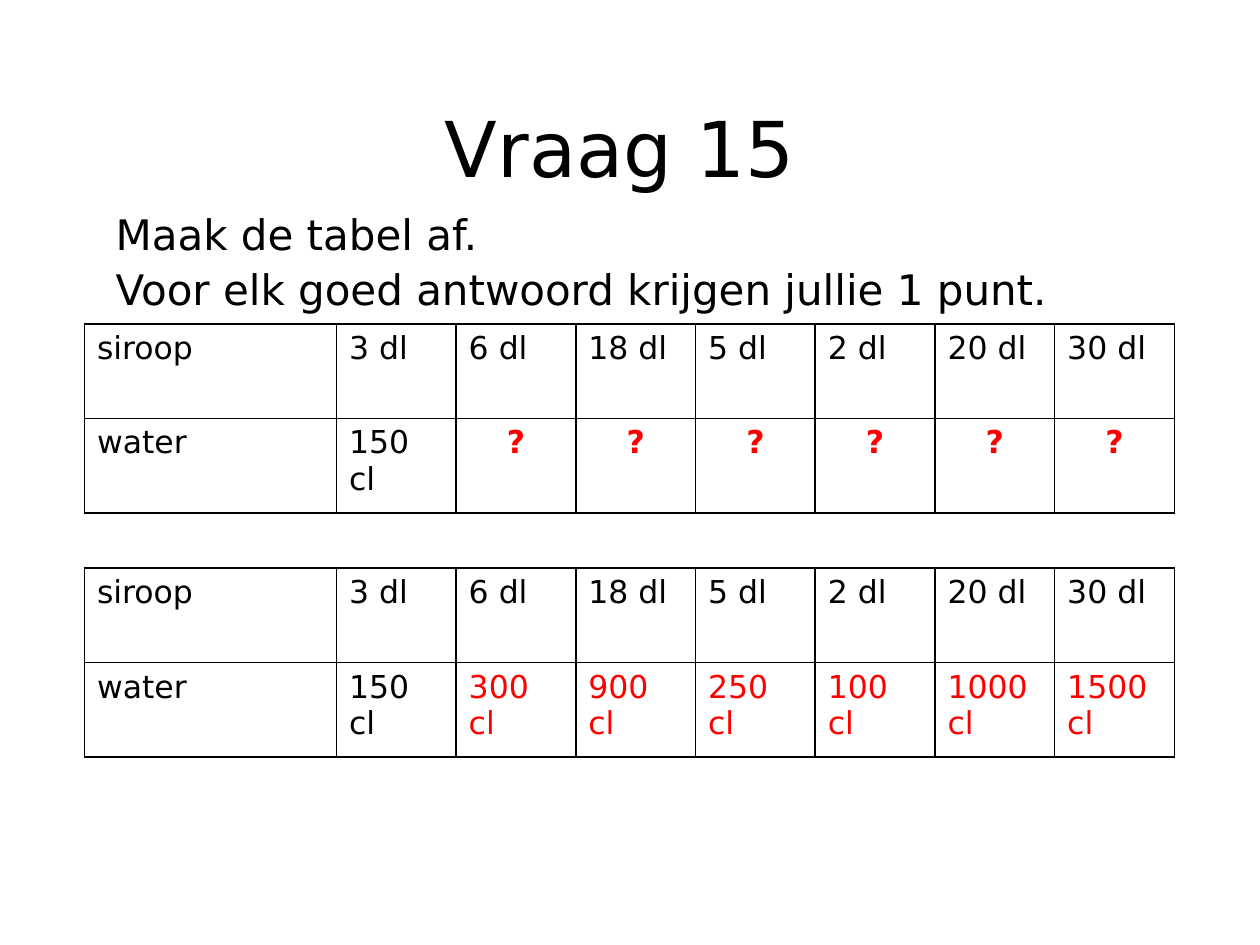
from lxml import etree
from pptx import Presentation
from pptx.dml.color import RGBColor
from pptx.enum import shapes, text
from pptx.oxml import ns
from pptx.util import Inches, Pt

BLACK = RGBColor(0, 0, 0)
WHITE = RGBColor(255, 255, 255)
RED = RGBColor(255, 0, 0)
FONT = "DejaVu Sans"

SYRUP = ["siroop", "3 dl", "6 dl", "18 dl", "5 dl", "2 dl", "20 dl", "30 dl"]
GIVEN = ["water", "150 cl"]
QUESTIONS = ["?"] * 6
ANSWERS = ["300 cl", "900 cl", "250 cl", "100 cl", "1000 cl", "1500 cl"]


def add_span(para, words, size, color=BLACK, bold=False):
    span = para.add_run()
    span.text = words
    span.font.name = FONT
    span.font.size = Pt(size)
    span.font.bold = bold
    span.font.color.rgb = color


def set_title(page, words):
    title = page.shapes.title
    title.left, title.top = Inches(0.67), Inches(0.36)
    title.width, title.height = Inches(8.5), Inches(1.61)
    title.text_frame.vertical_anchor = text.MSO_ANCHOR.MIDDLE
    para = title.text_frame.paragraphs[0]
    para.alignment = text.PP_ALIGN.CENTER
    add_span(para, words, 44)


def add_instructions(page, lines):
    box = page.shapes.add_shape(
        shapes.MSO_SHAPE.RECTANGLE,
        Inches(0.43), Inches(1.65), Inches(9.06), Inches(5.17))
    box.shadow.inherit = False
    box.line.fill.background()
    box.fill.solid()
    box.fill.fore_color.rgb = WHITE
    color = box.fill._xPr.find(".//" + ns.qn("a:srgbClr"))
    etree.SubElement(color, ns.qn("a:alpha"), val="76000")
    frame = box.text_frame
    frame.word_wrap = True
    frame.vertical_anchor = text.MSO_ANCHOR.TOP
    for index, line in enumerate(lines):
        para = frame.paragraphs[0] if index == 0 else frame.add_paragraph()
        para.alignment = text.PP_ALIGN.LEFT
        para.line_spacing = 0.9
        para.space_before = Pt(5.8 if index else 0)
        properties = para._p.get_or_add_pPr()
        properties.set("marL", str(Inches(0.21)))
        properties.set("indent", str(Inches(0.18)))
        add_span(para, line, 24)


def add_borders(cell):
    properties = cell._tc.get_or_add_tcPr()
    for index, side in enumerate(("lnL", "lnR", "lnT", "lnB")):
        line = etree.Element(ns.qn("a:" + side), w=str(Pt(1)))
        fill = etree.SubElement(line, ns.qn("a:solidFill"))
        etree.SubElement(fill, ns.qn("a:srgbClr"), val=str(BLACK))
        properties.insert(index, line)


def add_ratio_table(page, top, results, emphasized=False):
    rows = [SYRUP, GIVEN + results]
    table = page.shapes.add_table(
        len(rows), len(SYRUP),
        Inches(0.67), Inches(top), Inches(8.66), Inches(1.5)).table
    table.first_row = False
    table.horz_banding = False
    for index, column in enumerate(table.columns):
        column.width = Inches(0.95 if index else 2)
    for row_index, row in enumerate(rows):
        table.rows[row_index].height = Inches(0.75)
        for column_index, words in enumerate(row):
            cell = table.cell(row_index, column_index)
            cell.fill.background()
            add_borders(cell)
            para = cell.text_frame.paragraphs[0]
            is_result = row_index == 1 and column_index >= len(GIVEN)
            if is_result and emphasized:
                para.alignment = text.PP_ALIGN.CENTER
            add_span(para, words, 18, RED if is_result else BLACK,
                     is_result and emphasized)


def main():
    deck = Presentation()
    deck.slide_width, deck.slide_height = Inches(10), Inches(7.5)
    page = deck.slides.add_slide(deck.slide_layouts[5])
    set_title(page, "Vraag 15")
    add_instructions(page, ["Maak de tabel af.",
                            "Voor elk goed antwoord krijgen jullie 1 punt."])
    add_ratio_table(page, 2.57, QUESTIONS, emphasized=True)
    add_ratio_table(page, 4.51, ANSWERS)
    deck.save("out.pptx")


if __name__ == "__main__":
    main()
